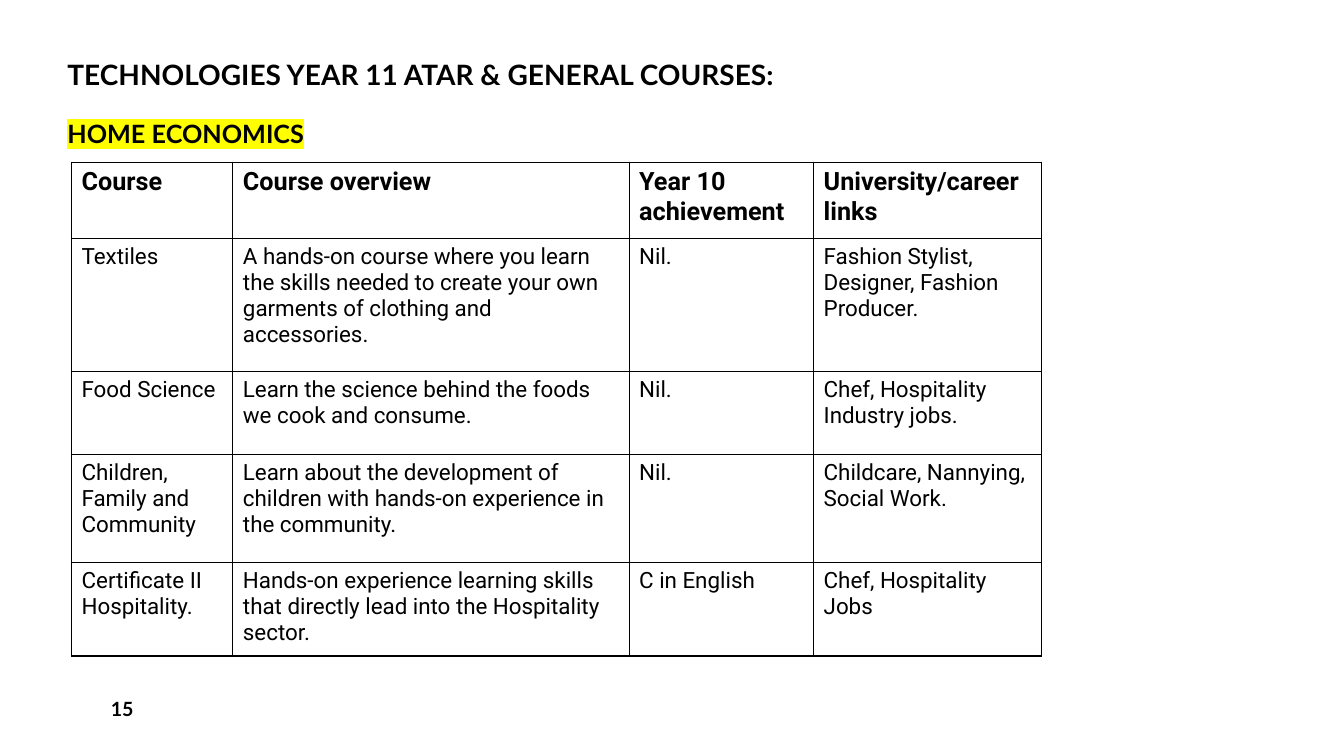
from lxml.etree import SubElement
from pptx import Presentation
from pptx.dml.color import RGBColor
from pptx.enum.text import MSO_ANCHOR
from pptx.oxml.ns import qn
from pptx.util import Inches, Pt

COLORS = {"ink": "000000", "highlight": "FFFF00"}
COLUMN_WIDTHS = [1.6, 3.93, 1.83, 2.26]
ROW_HEIGHTS = [0.76, 1.32, 0.82, 1.07, 0.93]
COURSES = [
    ["Course", "Course overview", "Year 10 achievement", "University/career links"],
    ["Textiles",
     "A hands-on course where you learn the skills needed to create your own "
     "garments of clothing and accessories.",
     "Nil.", "Fashion Stylist, Designer, Fashion Producer."],
    ["Food Science", "Learn the science behind the foods we cook and consume.",
     "Nil.", "Chef, Hospitality Industry jobs."],
    ["Children, Family and Community",
     "Learn about the development of children with hands-on experience in the community.",
     "Nil.", "Childcare, Nannying, Social Work."],
    ["Certificate II Hospitality.",
     "Hands-on experience learning skills that directly lead into the Hospitality sector.",
     "C in English", "Chef, Hospitality Jobs"],
]


def style(para, name, size, bold):
    font = para.font
    font.name, font.size, font.bold = name, Pt(size), bold
    font.color.rgb = RGBColor.from_string(COLORS["ink"])


def add_text_frame(page, left, top, width, height, anchor):
    frame = page.shapes.add_textbox(
        Inches(left), Inches(top), Inches(width), Inches(height)).text_frame
    frame.word_wrap = True
    frame.vertical_anchor = anchor
    return frame


def add_heading(page, left, top, width, height):
    """Page title with the highlighted subject below it."""
    frame = add_text_frame(page, left, top, width, height, MSO_ANCHOR.BOTTOM)
    title, subject = frame.paragraphs[0], frame.add_paragraph()
    title.text = "TECHNOLOGIES YEAR 11 ATAR & GENERAL COURSES:"
    span = subject.add_run()
    span.text = "HOME ECONOMICS"
    subject.space_before = Pt(22)
    for para, size in ((title, 20), (subject, 18)):
        para.line_spacing = 0.9
        style(para, "Lato", size, True)
    highlight = SubElement(span.font._element, qn("a:highlight"))
    SubElement(highlight, qn("a:srgbClr"), val=COLORS["highlight"])


def add_borders(cell):
    properties = cell._tc.get_or_add_tcPr()
    for side in ("lnL", "lnR", "lnT", "lnB"):
        line = SubElement(properties, qn(f"a:{side}"), w=str(Pt(1)))
        fill = SubElement(line, qn("a:solidFill"))
        SubElement(fill, qn("a:srgbClr"), val=COLORS["ink"])


def add_course_table(page, left, top):
    table = page.shapes.add_table(
        len(ROW_HEIGHTS), len(COLUMN_WIDTHS), Inches(left), Inches(top),
        Inches(sum(COLUMN_WIDTHS)), Inches(sum(ROW_HEIGHTS))).table
    table.horz_banding = False
    for column, width in zip(table.columns, COLUMN_WIDTHS):
        column.width = Inches(width)
    for index, (row, height) in enumerate(zip(table.rows, ROW_HEIGHTS)):
        row.height = Inches(height)
        header = index == 0
        for cell, text in zip(row.cells, COURSES[index]):
            cell.text = text
            style(cell.text_frame.paragraphs[0], "Roboto", 18 if header else 16, header)
            add_borders(cell)
            cell.fill.background()


def add_page_number(page, left, top, width, height):
    para = add_text_frame(page, left, top, width, height, MSO_ANCHOR.MIDDLE).paragraphs[0]
    para.text = "15"
    style(para, "Lato", 14, True)


def main():
    deck = Presentation()
    deck.slide_width, deck.slide_height = Inches(13.33), Inches(7.5)
    page = deck.slides.add_slide(deck.slide_layouts[6])
    add_heading(page, 0.57, 0.08, 9.62, 1.45)
    add_course_table(page, 0.71, 1.61)
    add_page_number(page, 1, 6.83, 2.92, 0.4)
    deck.save("out.pptx")


if __name__ == "__main__":
    main()
